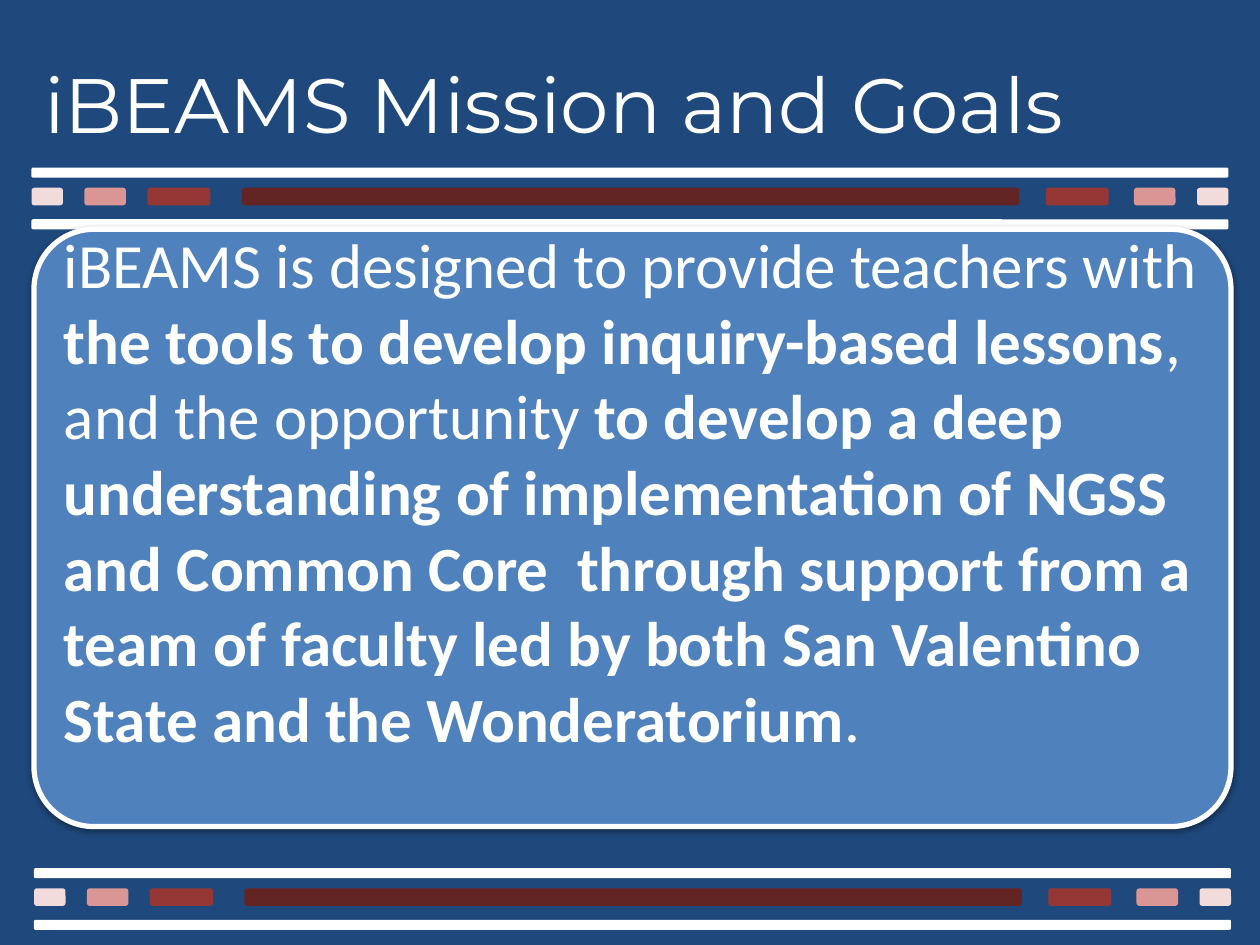
from lxml import etree
from pptx import Presentation
from pptx.dml.color import RGBColor
from pptx.enum.shapes import MSO_SHAPE
from pptx.enum.text import MSO_ANCHOR, PP_ALIGN
from pptx.oxml.ns import qn
from pptx.util import Inches, Pt

ROUNDED = MSO_SHAPE.ROUNDED_RECTANGLE
LEFT = PP_ALIGN.LEFT

COLORS = {
    "navy": "1F497D", "blue": "4F81BD", "white": "FFFFFF", "black": "000000",
    "maroon": "632523", "red": "953735", "rose": "D99694", "blush": "F2DCDB",
}

TITLE = "iBEAMS Mission and Goals"
MISSION = [  # text, bold
    ("iBEAMS is designed to provide teachers with ", False),
    ("the tools to develop inquiry-based lessons", True),
    (", and the opportunity ", False),
    ("to develop a deep understanding of implementation of NGSS and Common Core  "
     "through support from a team of faculty led by both San Valentino "
     "State and the Wonderatorium", True),
    (".", False),
]

# Each band: left and top of its upper rule
BANDS = [(0.25, 1.33), (0.27, 6.89)]
RULE_WIDTH, RULE_HEIGHT, RULE_STEP = 9.5, 0.08, 0.41
DASH_HEIGHT, DASH_DROP = 0.14, 0.16
DASHES = [  # offset from the band's left, width, color
    (0, 0.25, "blush"), (0.42, 0.33, "rose"), (0.92, 0.5, "red"),
    (1.67, 6.17, "maroon"),
    (8.05, 0.5, "red"), (8.75, 0.33, "rose"), (9.25, 0.25, "blush"),
]


def rgb(name):
    return RGBColor.from_string(COLORS[name])


def add_bar(slide, left, top, width, height, color):
    bar = slide.shapes.add_shape(
        ROUNDED, Inches(left), Inches(top), Inches(width), Inches(height))
    bar.shadow.inherit = False
    bar.fill.solid()
    bar.fill.fore_color.rgb = rgb(color)
    bar.line.fill.background()
    return bar


def add_band(slide, left, top):
    """Two white rules with a row of colored dashes between them."""
    for offset, width, color in DASHES:
        add_bar(slide, left + offset, top + DASH_DROP, width, DASH_HEIGHT, color)
    for row in range(2):
        add_bar(slide, left, top + row * RULE_STEP, RULE_WIDTH, RULE_HEIGHT, "white")


def add_drop_shadow(shape):
    effects = shape._element.spPr.find(qn("a:effectLst"))
    shadow = etree.SubElement(
        effects, qn("a:outerShdw"), blurRad=str(Pt(3.1)), dist=str(Pt(1.6)),
        dir="5400000", rotWithShape="0")
    color = etree.SubElement(shadow, qn("a:srgbClr"), val=COLORS["black"])
    etree.SubElement(color, qn("a:alpha"), val="38000")


def add_text(paragraph, text, font_name, size, bold=False):
    run = paragraph.add_run()
    run.text = text
    for name, value in {"name": font_name, "size": Pt(size), "bold": bold}.items():
        setattr(run.font, name, value)
    run.font.color.rgb = rgb("white")


def add_mission(slide):
    panel = add_bar(slide, 0.27, 1.82, 9.5, 4.74, "blue")
    panel.adjustments[0] = 0.1
    panel.line.color.rgb = rgb("white")
    panel.line.width = Pt(3)
    add_drop_shadow(panel)
    frame = panel.text_frame
    frame.word_wrap = True
    frame.vertical_anchor = MSO_ANCHOR.BOTTOM
    frame.margin_top = 0
    frame.margin_bottom = Inches(0.43)
    paragraph = frame.paragraphs[0]
    paragraph.alignment = LEFT
    for text, bold in MISSION:
        add_text(paragraph, text, "Calibri", 36, bold)


def set_title(slide):
    title = slide.shapes.title
    place = {"left": 0.25, "top": 0.4, "width": 9.52, "height": 0.84}
    for name, value in place.items():
        setattr(title, name, Inches(value))
    title.text_frame.vertical_anchor = MSO_ANCHOR.TOP
    paragraph = title.text_frame.paragraphs[0]
    paragraph.alignment = LEFT
    add_text(paragraph, TITLE, "Montserrat", 44)


def main():
    presentation = Presentation()
    presentation.slide_width = Inches(10)
    presentation.slide_height = Inches(7.5)
    slide = presentation.slides.add_slide(presentation.slide_layouts[5])
    slide.background.fill.solid()
    slide.background.fill.fore_color.rgb = rgb("navy")
    for left, top in BANDS:
        add_band(slide, left, top)
    add_mission(slide)
    set_title(slide)
    presentation.save("out.pptx")


if __name__ == "__main__":
    main()
